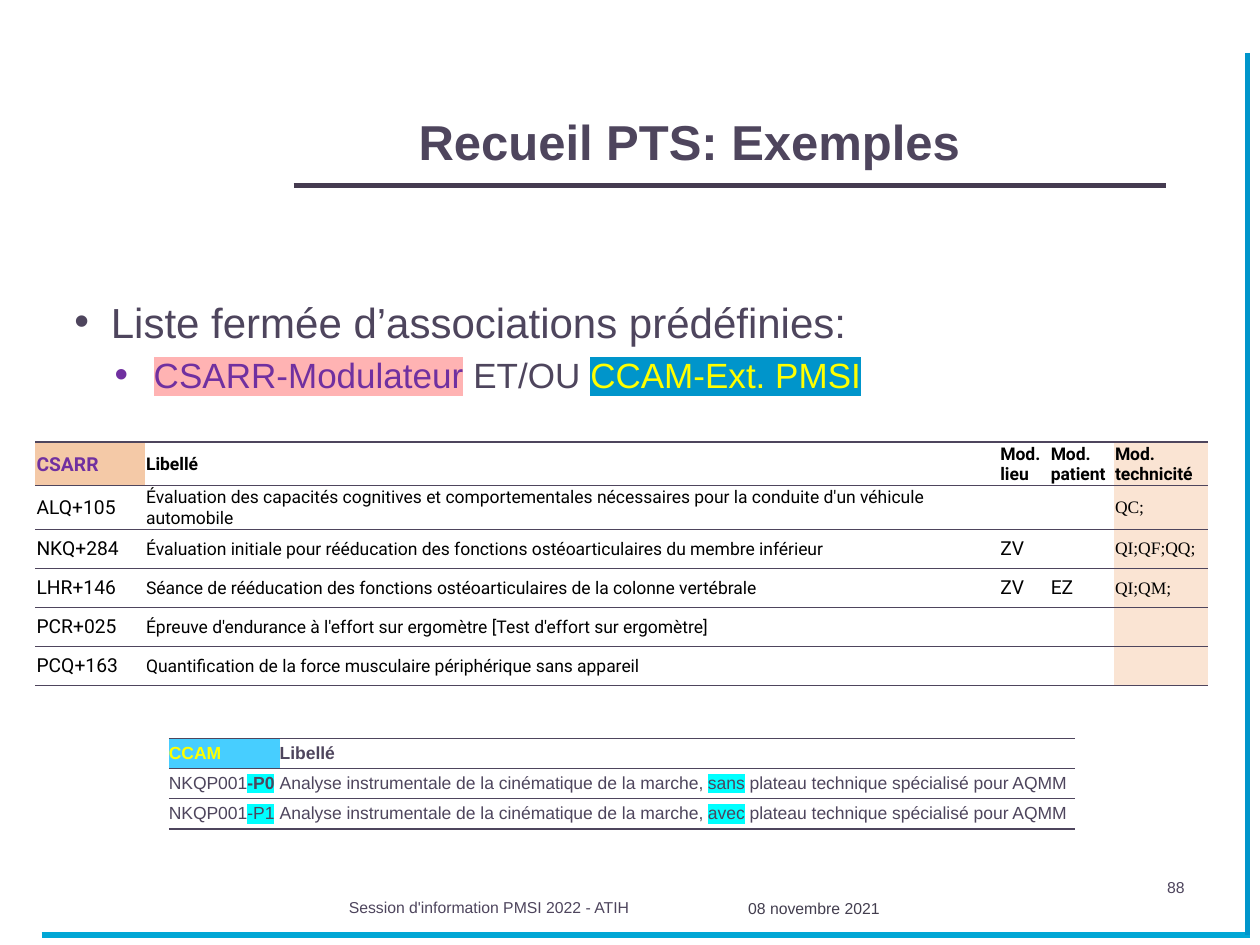
from lxml import etree
from pptx import Presentation
from pptx import util as u
from pptx.dml.color import RGBColor
from pptx.enum import shapes, text
from pptx.oxml import ns

PLUM = RGBColor(0x4E, 0x45, 0x5D)
DARK_PLUM = RGBColor(0x45, 0x3B, 0x50)
DATE_GREY = RGBColor(0x43, 0x3E, 0x4F)
BLUE = RGBColor(0x00, 0x95, 0xCB)
SKY = RGBColor(0x02, 0xA7, 0xD5)
LIGHT_BLUE = RGBColor(0x47, 0xCE, 0xFF)
CYAN = RGBColor(0x00, 0xFF, 0xFF)
PURPLE = RGBColor(0x70, 0x30, 0xA0)
PINK = RGBColor(0xFF, 0xB3, 0xB3)
YELLOW = RGBColor(0xFF, 0xFF, 0x00)
ORANGE = RGBColor(0xF4, 0xC9, 0xA7)
PEACH = RGBColor(0xFA, 0xE4, 0xD3)
BLACK = RGBColor(0, 0, 0)
NO_STYLE = "{2D5ABB26-0587-4C30-8999-92F81FD0307C}"


def add_xml(parent, tag, **attributes):
    return etree.SubElement(parent, ns.qn(tag), attributes)


def write(paragraph, words, size=10, color=PLUM, bold=False, font="Arial", highlight=None):
    run = paragraph.add_run()
    run.text = words
    run.font.size = u.Pt(size)
    run.font.bold = bold
    run.font.color.rgb = color
    if highlight is not None:
        mark = etree.Element(ns.qn("a:highlight"))
        add_xml(mark, "a:srgbClr", val=str(highlight))
        run.font._element.find(ns.qn("a:solidFill")).addnext(mark)
    run.font.name = font


class SlideBuilder:
    def __init__(self, slide):
        self.slide = slide
        self.rule_width = u.Pt(3)
        self.border_color = PLUM

    def place(self, shape, *box):
        shape.left, shape.top, shape.width, shape.height = map(u.Inches, box)

    def rule(self, x1, y1, x2, y2, color):
        line = self.slide.shapes.add_connector(
            shapes.MSO_CONNECTOR.STRAIGHT, *map(u.Inches, (x1, y1, x2, y2)))
        line.line.color.rgb = color
        line.line.width = self.rule_width
        add_xml(line._element.spPr, "a:effectLst")

    def title(self, words, *box):
        title = self.slide.shapes.title
        self.place(title, *box)
        frame = title.text_frame
        frame.auto_size = text.MSO_AUTO_SIZE.NONE
        frame.vertical_anchor = text.MSO_ANCHOR.BOTTOM
        paragraph = frame.paragraphs[0]
        paragraph.alignment = text.PP_ALIGN.CENTER
        write(paragraph, words, size=28, bold=True)

    def bullets(self, items, *box):
        body = self.slide.placeholders[1]
        self.place(body, *box)
        frame = body.text_frame
        frame.auto_size = text.MSO_AUTO_SIZE.NONE
        for index, (level, indent, hanging, bullet_size, runs) in enumerate(items):
            paragraph = frame.add_paragraph() if index else frame.paragraphs[0]
            paragraph.level = level
            paragraph.space_before = u.Pt(4 if index else 0)
            properties = paragraph._p.get_or_add_pPr()
            properties.set("marL", str(u.Inches(indent)))
            properties.set("indent", str(-u.Inches(hanging)))
            add_xml(properties, "a:buSzPct", val=str(bullet_size * 1000))
            add_xml(properties, "a:buFont", typeface="Arial")
            add_xml(properties, "a:buChar", char="•")
            for words, style in runs:
                write(paragraph, words, **style)

    def label(self, words, *box, align=text.PP_ALIGN.LEFT, color=PLUM):
        frame = self.slide.shapes.add_textbox(*map(u.Inches, box)).text_frame
        frame.word_wrap = True
        frame.paragraphs[0].alignment = align
        write(frame.paragraphs[0], words, size=9, color=color)

    def border(self, cell, side, width):
        line = etree.Element(ns.qn(side), w=str(u.Pt(width)))
        fill = add_xml(line, "a:solidFill")
        add_xml(fill, "a:srgbClr", val=str(self.border_color))
        return line

    def table(self, rows, left, top, widths, heights, inset, fills):
        frame = self.slide.shapes.add_table(
            len(rows), len(widths),
            *map(u.Inches, (left, top, sum(widths), sum(heights))))
        table = frame.table
        table.first_row = table.horz_banding = False
        table._tbl.tblPr.find(ns.qn("a:tableStyleId")).text = NO_STYLE
        for column, width in zip(table.columns, widths):
            column.width = u.Inches(width)
        for row, height in zip(table.rows, heights):
            row.height = u.Inches(height)
        for r, row in enumerate(rows):
            for c, lines in enumerate(row):
                cell = table.cell(r, c)
                cell.vertical_anchor = text.MSO_ANCHOR.MIDDLE
                cell.margin_left = cell.margin_right = cell.margin_top = u.Inches(inset)
                cell.margin_bottom = 0
                color = fills(r, c)
                if color is None:
                    cell.fill.background()
                else:
                    cell.fill.solid()
                    cell.fill.fore_color.rgb = color
                top_width = 1 if r < 2 else 0.5
                bottom_width = 1 if r in (0, len(rows) - 1) else 0.5
                properties = cell._tc.get_or_add_tcPr()
                properties.insert(0, self.border(cell, "a:lnT", top_width))
                properties.insert(1, self.border(cell, "a:lnB", bottom_width))
                for index, runs in enumerate(lines):
                    paragraphs = cell.text_frame
                    paragraph = paragraphs.add_paragraph() if index else paragraphs.paragraphs[0]
                    for words, style in runs:
                        write(paragraph, words, **style)


def csarr_rows():
    header = dict(font="Roboto", color=BLACK, bold=True)
    code = dict(font="Roboto", color=BLACK, size=11)
    wording = dict(font="Roboto", color=BLACK)
    technique = dict(font="Times New Roman", color=BLACK)
    acts = [
        ("ALQ+105", "Évaluation des capacités cognitives et comportementales nécessaires "
                    "pour la conduite d'un véhicule automobile", "", "", "QC;"),
        ("NKQ+284", "Évaluation initiale pour rééducation des fonctions ostéoarticulaires "
                    "du membre inférieur", "ZV", "", "QI;QF;QQ;"),
        ("LHR+146", "Séance de rééducation des fonctions ostéoarticulaires "
                    "de la colonne vertébrale", "ZV", "EZ", "QI;QM;"),
        ("PCR+025", "Épreuve d'endurance à l'effort sur ergomètre "
                    "[Test d'effort sur ergomètre]", "", "", ""),
        ("PCQ+163", "Quantification de la force musculaire périphérique sans appareil", "", "", ""),
    ]
    modifiers = [[[("Mod.", header)], [(kind, header)]] for kind in ("lieu", "patient", "technicité")]
    first = [[[("CSARR", dict(header, size=11, color=PURPLE))]], [[("Libellé", header)]]]
    styles = (code, wording, code, code, technique)
    return [first + modifiers] + [
        [[[(words, style)]] if words else [] for words, style in zip(act, styles)] for act in acts]


def ccam_rows():
    rows = [[[[("CCAM", dict(color=YELLOW, bold=True))]], [[("Libellé", dict(bold=True))]]]]
    for extension, choice, bold in (("-P0", "sans", True), ("-P1", "avec", False)):
        rows.append([
            [[("NKQP001", {}), (extension, dict(highlight=CYAN, bold=bold))]],
            [[("Analyse instrumentale de la cinématique de la marche, ", {}),
              (choice, dict(highlight=CYAN)),
              (" plateau technique spécialisé pour AQMM", {})]]])
    return rows


def csarr_fill(row, column):
    if column == 4:
        return PEACH
    return ORANGE if (row, column) == (0, 0) else None


def ccam_fill(row, column):
    return LIGHT_BLUE if (row, column) == (0, 0) else None


def main():
    deck = Presentation()
    deck.slide_width, deck.slide_height = u.Inches(10), u.Inches(7.5)
    page = SlideBuilder(deck.slides.add_slide(deck.slide_layouts[1]))
    page.rule(2.33, 1.47, 9.25, 1.47, DARK_PLUM)
    page.rule(0.33, 7.42, 9.92, 7.42, SKY)
    page.rule(9.9, 7.42, 9.9, 0.42, BLUE)
    page.title("Recueil PTS: Exemples", 1.69, 0.31, 7.56, 1.09)
    page.bullets([
        (0, 0.49, 0.29, 100, [("Liste fermée d’associations prédéfinies:", dict(size=24))]),
        (1, 0.83, 0.31, 110, [
            ("CSARR-Modulateur", dict(size=20, color=PURPLE, highlight=PINK)),
            (" ET/OU ", dict(size=20)),
            ("CCAM-Ext. PMSI", dict(size=20, color=YELLOW, highlight=BLUE))]),
    ], 0.29, 2.3, 9.37, 0.87)
    page.label("88", 7.67, 6.92, 1.83, 0.44, align=text.PP_ALIGN.RIGHT)
    page.label("Session d'information PMSI 2022 - ATIH", 2.67, 7.08, 3.17, 0.34)
    page.label("08 novembre 2021", 5.84, 7.08, 1.67, 0.28, color=DATE_GREY)
    page.table(csarr_rows(), 0.28, 3.51, (0.87, 6.78, 0.4, 0.51, 0.75),
               [0.34] * 2 + [0.31] * 4, 0.01, csarr_fill)
    page.table(ccam_rows(), 1.34, 5.86, (0.88, 6.31), [0.24] * 3, 0, ccam_fill)
    deck.save("out.pptx")


if __name__ == "__main__":
    main()
